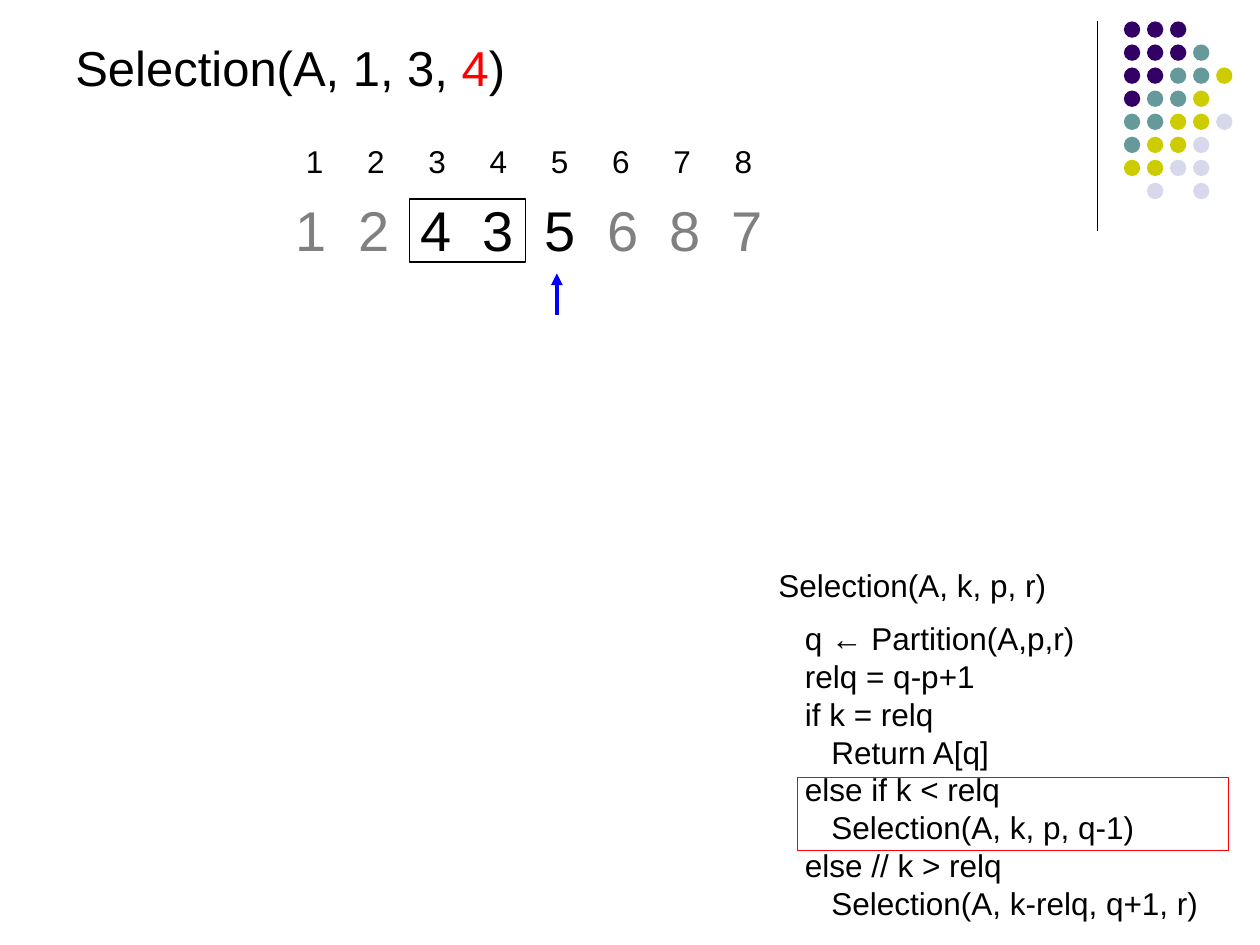
from lxml import etree
from pptx import Presentation
from pptx.dml.color import RGBColor
from pptx.enum.shapes import MSO_CONNECTOR, MSO_SHAPE
from pptx.oxml.ns import qn
from pptx.util import Inches, Pt

STRAIGHT = MSO_CONNECTOR.STRAIGHT
ELLIPSE = MSO_SHAPE.OVAL
RECTANGLE = MSO_SHAPE.RECTANGLE

COLORS = {
    "black": "000000",
    "gray": "808080",
    "red": "FF0000",
    "blue": "0000FF",
    "purple": "330066",
    "teal": "669999",
    "olive": "CCCC00",
    "lavender": "D8D8EC",
}
DOT_COLORS = {"P": "purple", "T": "teal", "O": "olive", "L": "lavender"}
DOT_ROWS = ["PPP", "PPPT", "PPTTO", "PTTO", "TTOOL", "TOOL", "OOLL", " L L"]
DOT_PITCH = 0.183

PSEUDOCODE = [
    (0, "Selection(A, k, p, r)"),
    (1, "q ← Partition(A,p,r)"),
    (1, "relq = q-p+1"),
    (1, "if k = relq"),
    (2, "Return A[q]"),
    (1, "else if k < relq"),
    (2, "Selection(A, k, p, q-1)"),
    (1, "else // k > relq"),
    (2, "Selection(A, k-relq, q+1, r)"),
]
CODE_INDENT = 0.21


def color(name):
    return RGBColor.from_string(COLORS[name])


def add_textbox(slide, left, top, width, height):
    frame = slide.shapes.add_textbox(
        Inches(left), Inches(top), Inches(width), Inches(height)).text_frame
    frame.word_wrap = True
    return frame


def add_text(paragraph, text, size=18, fill="black"):
    run = paragraph.add_run()
    run.text = text
    run.font.size = Pt(size)
    run.font.name = "Arial"
    run.font.color.rgb = color(fill)


def set_tab_stops(paragraph, pitch, count):
    stops = etree.SubElement(paragraph._p.get_or_add_pPr(), qn("a:tabLst"))
    for number in range(1, count + 1):
        etree.SubElement(stops, qn("a:tab"),
                         pos=str(Inches(pitch * number)), algn="l")


def add_number_row(slide, numbers, fills, left, top, width, height, size, pitch):
    row = add_textbox(slide, left, top, width, height).paragraphs[0]
    set_tab_stops(row, pitch, len(numbers) - 1)
    for position, (number, fill) in enumerate(zip(numbers, fills)):
        add_text(row, f"\t{number}" if position else str(number), size=size, fill=fill)


def add_shape(slide, preset, left, top, width, height, fill=None, outline=None):
    shape = slide.shapes.add_shape(
        preset, Inches(left), Inches(top), Inches(width), Inches(height))
    shape.shadow.inherit = False
    if fill:
        shape.fill.solid()
        shape.fill.fore_color.rgb = color(fill)
    else:
        shape.fill.background()
    if outline:
        shape.line.color.rgb = color(outline)
        shape.line.width = Pt(0.75)
    else:
        shape.line.fill.background()


def add_line(slide, start, end, stroke, weight, arrow=False):
    line = slide.shapes.add_connector(
        STRAIGHT, *(Inches(value) for value in start + end))
    line.line.color.rgb = color(stroke)
    line.line.width = Pt(weight)
    if arrow:
        etree.SubElement(line.line._get_or_add_ln(), qn("a:tailEnd"), type="triangle")
    etree.SubElement(line._element.spPr, qn("a:effectLst"))


def add_dot_pattern(slide):
    for row, dots in enumerate(DOT_ROWS):
        for column, dot in enumerate(dots):
            if dot in DOT_COLORS:
                add_shape(slide, ELLIPSE, 8.92 + column * DOT_PITCH,
                          0.17 + row * DOT_PITCH, 0.13, 0.13, fill=DOT_COLORS[dot])


def add_pseudocode(slide):
    frame = add_textbox(slide, 6.08, 4.44, 3.75, 2.98)
    for number, (level, text) in enumerate(PSEUDOCODE):
        line = frame.add_paragraph() if number else frame.paragraphs[0]
        properties = line._p.get_or_add_pPr()
        properties.set("marL", str(Inches(level * CODE_INDENT)))
        properties.set("indent", "0")
        if number == 1:
            line.space_before = Pt(9)
        add_text(line, text)


def add_call_title(slide):
    title = add_textbox(slide, 0.5, 0.25, 6.42, 0.57).paragraphs[0]
    for text, fill in [("Selection(A, 1, 3, ", "black"), ("4", "red"), (")", "black")]:
        add_text(title, text, size=28, fill=fill)


def main():
    presentation = Presentation()
    presentation.slide_width = Inches(10)
    presentation.slide_height = Inches(7.5)
    slide = presentation.slides.add_slide(presentation.slide_layouts[6])

    add_line(slide, (8.71, 0.17), (8.71, 1.83), "black", 0.75)
    add_dot_pattern(slide)
    add_pseudocode(slide)
    add_call_title(slide)
    add_shape(slide, RECTANGLE, 6.33, 6.17, 3.42, 0.58, outline="red")
    add_number_row(slide, [1, 2, 4, 3, 5, 6, 8, 7],
                   ["gray"] * 2 + ["black"] * 3 + ["gray"] * 3,
                   2.25, 1.5, 4.58, 0.63, size=32, pitch=0.494)
    add_line(slide, (4.42, 2.5), (4.42, 2.17), "blue", 2.25, arrow=True)
    add_shape(slide, RECTANGLE, 3.25, 1.58, 0.92, 0.5, outline="black")
    add_number_row(slide, range(1, 9), ["black"] * 8,
                   2.33, 1.08, 4.17, 0.4, size=18, pitch=0.486)

    presentation.save("out.pptx")


if __name__ == "__main__":
    main()
